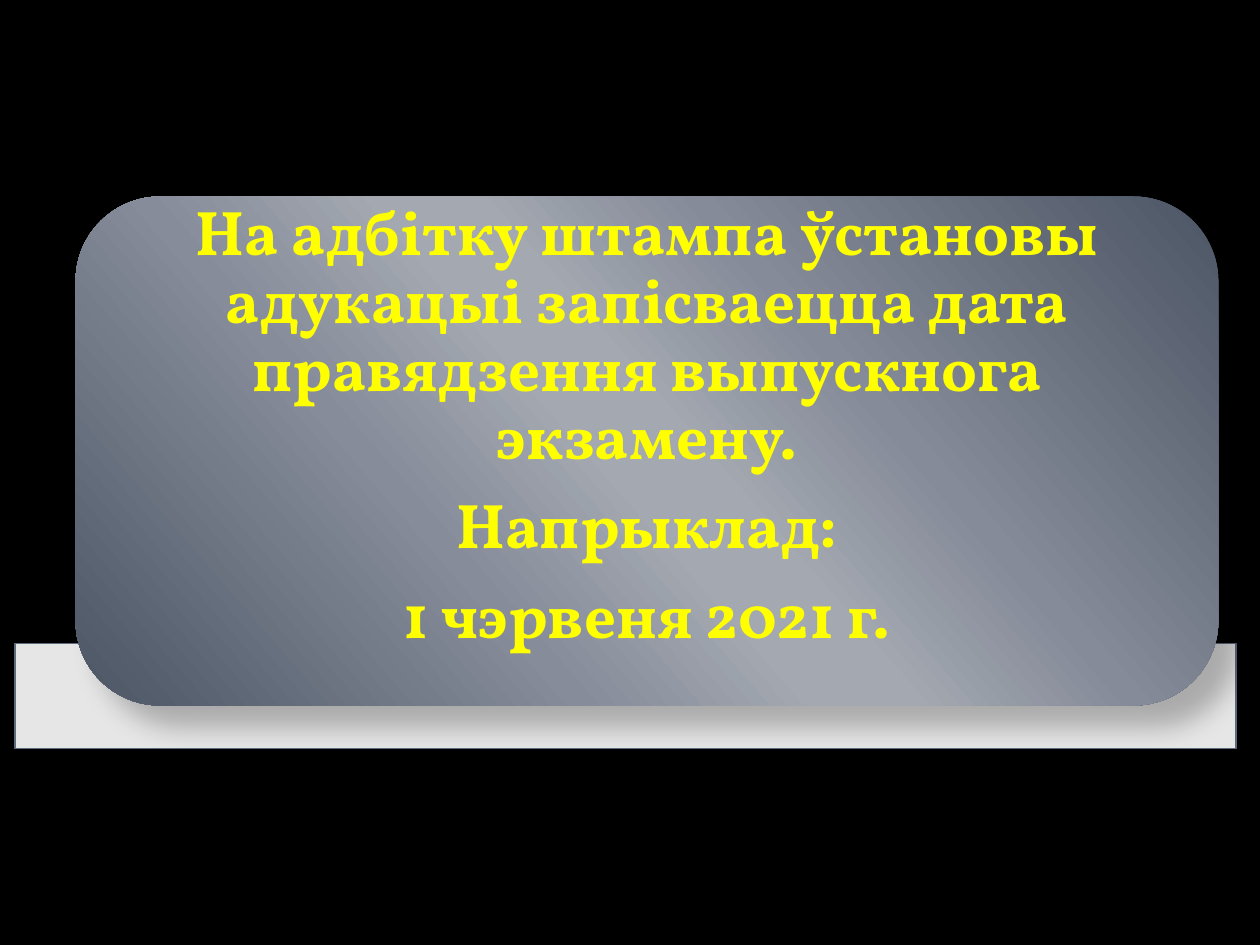
import pptx
import pptx.dml.color
import pptx.enum.shapes
import pptx.enum.text
import pptx.oxml
import pptx.oxml.ns
import pptx.util
from pptx.util import Inches

BLACK = pptx.dml.color.RGBColor(0x00, 0x00, 0x00)
WHITE = pptx.dml.color.RGBColor(0xFF, 0xFF, 0xFF)
YELLOW = pptx.dml.color.RGBColor(0xFF, 0xFF, 0x00)
SLATE = pptx.dml.color.RGBColor(0x5E, 0x6A, 0x7D)
PANEL_STOPS = [
    (0, pptx.dml.color.RGBColor(0x4B, 0x55, 0x64)),
    (33, pptx.dml.color.RGBColor(0x85, 0x8B, 0x98)),
    (47, pptx.dml.color.RGBColor(0xA3, 0xA8, 0xB1)),
    (53, pptx.dml.color.RGBColor(0xA3, 0xA8, 0xB1)),
    (68, pptx.dml.color.RGBColor(0x86, 0x8C, 0x99)),
    (100, pptx.dml.color.RGBColor(0x4B, 0x55, 0x64)),
]
PANEL_ANGLE = 139
FONT = "Vollkorn"
LINES = [
    "На адбітку штампа ўстановы адукацыі запісваецца дата правядзення выпускнога экзамену.",
    "Напрыклад:",
    "1 чэрвеня 2021 г.",
]


def parse_drawing(xml):
    """Return an element from DrawingML that uses the a: prefix."""
    head, tail = xml.split(">", 1)
    return pptx.oxml.parse_xml(f"{head} {pptx.oxml.ns.nsdecls('a')}>{tail}")


def add_shadow(shape):
    """Give the shape a soft shadow towards the lower right."""
    blur, distance = pptx.util.Pt(15), pptx.util.Pt(18)
    shape.shadow.inherit = False
    effects = shape.element.spPr.find(pptx.oxml.ns.qn("a:effectLst"))
    effects.append(parse_drawing(
        f'<a:outerShdw blurRad="{blur}" dist="{distance}" dir="{45 * 60000}" algn="ctr" rotWithShape="0">'
        f'<a:srgbClr val="{BLACK}"><a:alpha val="26000"/></a:srgbClr></a:outerShdw>'))


def add_bar(slide):
    """Add the translucent white bar behind the panel."""
    bar = slide.shapes.add_shape(
        pptx.enum.shapes.MSO_SHAPE.RECTANGLE, Inches(0.12), Inches(5.11), Inches(9.69), Inches(0.83))
    bar.fill.solid()
    bar.fill.fore_color.rgb = WHITE
    color = bar.element.spPr.find(".//" + pptx.oxml.ns.qn("a:srgbClr"))
    color.append(parse_drawing('<a:alpha val="90000"></a:alpha>'))
    bar.line.color.rgb = SLATE
    bar.line.width = pptx.util.Pt(0.75)
    add_shadow(bar)


def add_panel(slide):
    """Add the rounded panel with its diagonal gradient."""
    panel = slide.shapes.add_shape(
        pptx.enum.shapes.MSO_SHAPE.ROUNDED_RECTANGLE, Inches(0.6), Inches(1.56), Inches(9.07), Inches(4.04))
    panel.fill.gradient()
    gradient = panel.element.spPr.find(pptx.oxml.ns.qn("a:gradFill"))
    stops = "".join(
        f'<a:gs pos="{position * 1000}"><a:srgbClr val="{color}"/></a:gs>' for position, color in PANEL_STOPS)
    gradient.getparent().replace(gradient, parse_drawing(
        f'<a:gradFill rotWithShape="1"><a:gsLst>{stops}</a:gsLst>'
        f'<a:lin ang="{PANEL_ANGLE * 60000}" scaled="0"/></a:gradFill>'))
    panel.line.fill.background()
    add_shadow(panel)


def add_message(slide):
    """Add the centred message over the panel."""
    box = slide.shapes.add_textbox(Inches(0.8), Inches(1.76), Inches(8.67), Inches(3.65))
    frame = box.text_frame
    frame.word_wrap = True
    frame.vertical_anchor = pptx.enum.text.MSO_ANCHOR.MIDDLE
    frame.margin_left = frame.margin_right = Inches(0.26)
    frame.margin_top, frame.margin_bottom = 0, Inches(0.4)
    frame.text = "\n".join(LINES)
    for paragraph in frame.paragraphs:
        paragraph.alignment = pptx.enum.text.PP_ALIGN.CENTER
        paragraph.line_spacing = 0.9
        paragraph.space_after = pptx.util.Pt(12)
        paragraph.font.name = FONT
        paragraph.font.size = pptx.util.Pt(36)
        paragraph.font.bold = True
        paragraph.font.color.rgb = YELLOW


def main():
    """Build the slide and save it."""
    presentation = pptx.Presentation()
    presentation.slide_width, presentation.slide_height = Inches(10), Inches(7.5)
    slide = presentation.slides.add_slide(presentation.slide_layouts[6])
    slide.background.fill.solid()
    slide.background.fill.fore_color.rgb = BLACK
    add_bar(slide)
    add_panel(slide)
    add_message(slide)
    presentation.save("out.pptx")


if __name__ == "__main__":
    main()
